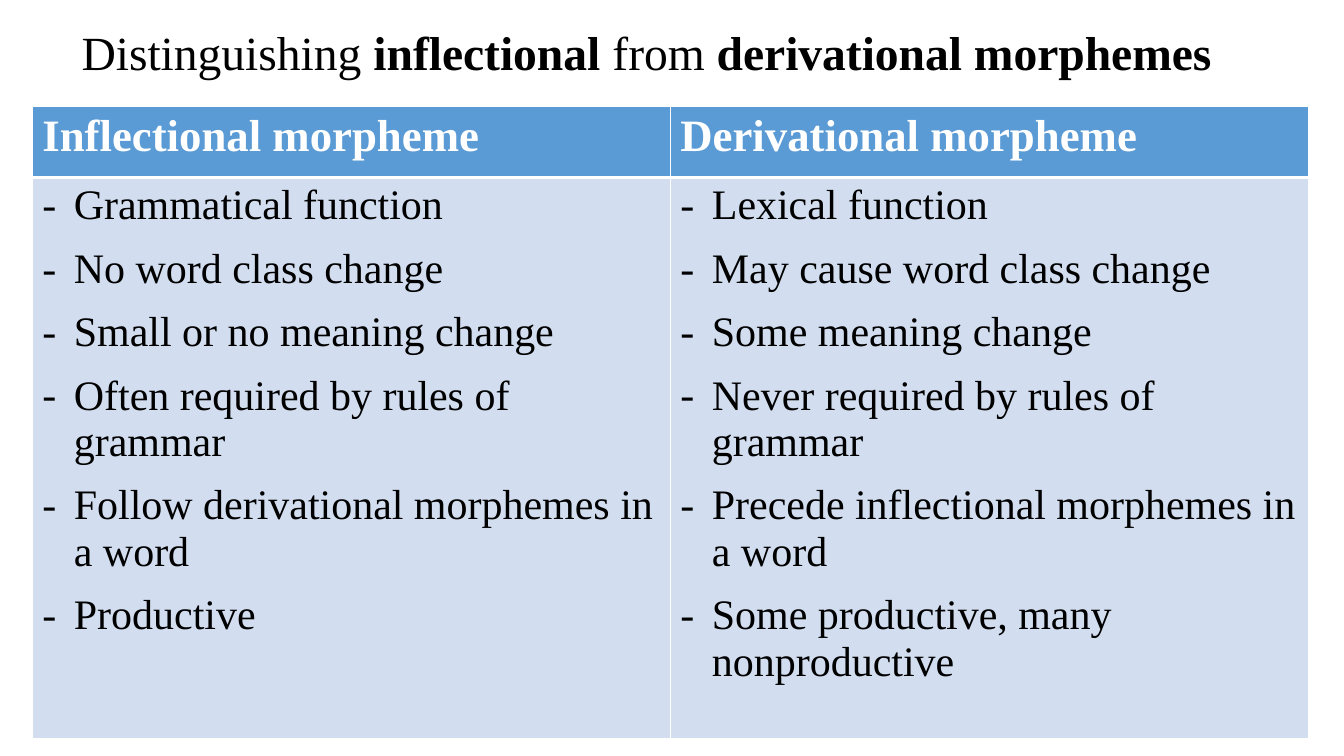
from lxml import etree
from pptx import Presentation
from pptx.dml.color import RGBColor
from pptx.enum.text import MSO_ANCHOR, PP_ALIGN
from pptx.oxml.ns import qn
from pptx.util import Pt

CENTER, MIDDLE = PP_ALIGN.CENTER, MSO_ANCHOR.MIDDLE
FONT = "Times New Roman"
BLACK, WHITE, HEADER_BLUE, BODY_BLUE = "000000", "FFFFFF", "5B9BD5", "D2DEEF"
TITLE_BOX = (35.28, 12.24, 861.84, 54.72)
COMPARISON_BOX = (23.04, 76.32, 911.52, 451.44)
HEADER_HEIGHT = 50.4
INDENT = 22.5

TITLE = [
    ("Distinguishing", False),
    (" inflectional ", True),
    ("from", False),
    (" derivational morphemes ", True),
]
COMPARISON = {
    "Inflectional morpheme": [
        "Grammatical function",
        "No word class change",
        "Small or no meaning change",
        "Often required by rules of grammar",
        "Follow derivational morphemes in a word",
        "Productive",
    ],
    "Derivational morpheme": [
        "Lexical function",
        "May cause word class change",
        "Some meaning change",
        "Never required by rules of grammar",
        "Precede inflectional morphemes in a word",
        "Some productive, many nonproductive",
    ],
}


def rgb(value):
    return RGBColor.from_string(value)


def add_text(paragraph, text, size, color=BLACK, bold=False):
    run = paragraph.add_run()
    run.text = text
    run.font.name = FONT
    run.font.size = Pt(size)
    run.font.bold = bold
    run.font.color.rgb = rgb(color)


def add_dash(paragraph):
    """Give the paragraph a hanging dash as its bullet."""
    properties = paragraph._p.get_or_add_pPr()
    properties.set("marL", str(Pt(INDENT)))
    properties.set("indent", str(-Pt(INDENT)))
    etree.SubElement(properties, qn("a:buFont"), typeface=FONT)
    etree.SubElement(properties, qn("a:buChar"), char="-")


def style_cell(cell, fill, top=1, bottom=1):
    """Fill the cell and draw white borders; top and bottom are line widths."""
    cell.fill.solid()
    cell.fill.fore_color.rgb = rgb(fill)
    properties = cell._tc.get_or_add_tcPr()
    widths = {"a:lnL": 1, "a:lnR": 1, "a:lnT": top, "a:lnB": bottom}
    for position, (side, width) in enumerate(widths.items()):
        border = etree.Element(qn(side), w=str(Pt(width)))
        line_fill = etree.SubElement(border, qn("a:solidFill"))
        etree.SubElement(line_fill, qn("a:srgbClr"), val=WHITE)
        properties.insert(position, border)


def place_title(slide, box):
    title = slide.shapes.title
    title.left, title.top, title.width, title.height = map(Pt, box)
    title.text_frame.vertical_anchor = MIDDLE
    heading = title.text_frame.paragraphs[0]
    heading.alignment = CENTER
    heading.line_spacing = 0.9
    for text, bold in TITLE:
        add_text(heading, text, 34, bold=bold)


def fill_traits(cell, traits):
    frame = cell.text_frame
    for index, trait in enumerate(traits):
        paragraph = frame.add_paragraph() if index else frame.paragraphs[0]
        paragraph.space_before = paragraph.space_after = Pt(6)
        add_dash(paragraph)
        add_text(paragraph, trait, 30)


def add_comparison(slide, box):
    left, top, width, height = box
    table = slide.shapes.add_table(
        2, len(COMPARISON), Pt(left), Pt(top), Pt(width), Pt(height)
    ).table
    table.rows[0].height = Pt(HEADER_HEIGHT)
    table.rows[1].height = Pt(height - HEADER_HEIGHT)
    for column, (morpheme, traits) in enumerate(COMPARISON.items()):
        header, body = table.cell(0, column), table.cell(1, column)
        style_cell(header, HEADER_BLUE, bottom=3)
        style_cell(body, BODY_BLUE, top=3)
        heading = header.text_frame.paragraphs[0]
        heading.space_after = Pt(6)
        add_text(heading, morpheme, 32, color=WHITE, bold=True)
        fill_traits(body, traits)


def main():
    presentation = Presentation()
    presentation.slide_width, presentation.slide_height = Pt(960), Pt(540)
    title_only = presentation.slide_layouts[5]
    slide = presentation.slides.add_slide(title_only)
    place_title(slide, TITLE_BOX)
    add_comparison(slide, COMPARISON_BOX)
    presentation.save("out.pptx")


if __name__ == "__main__":
    main()
